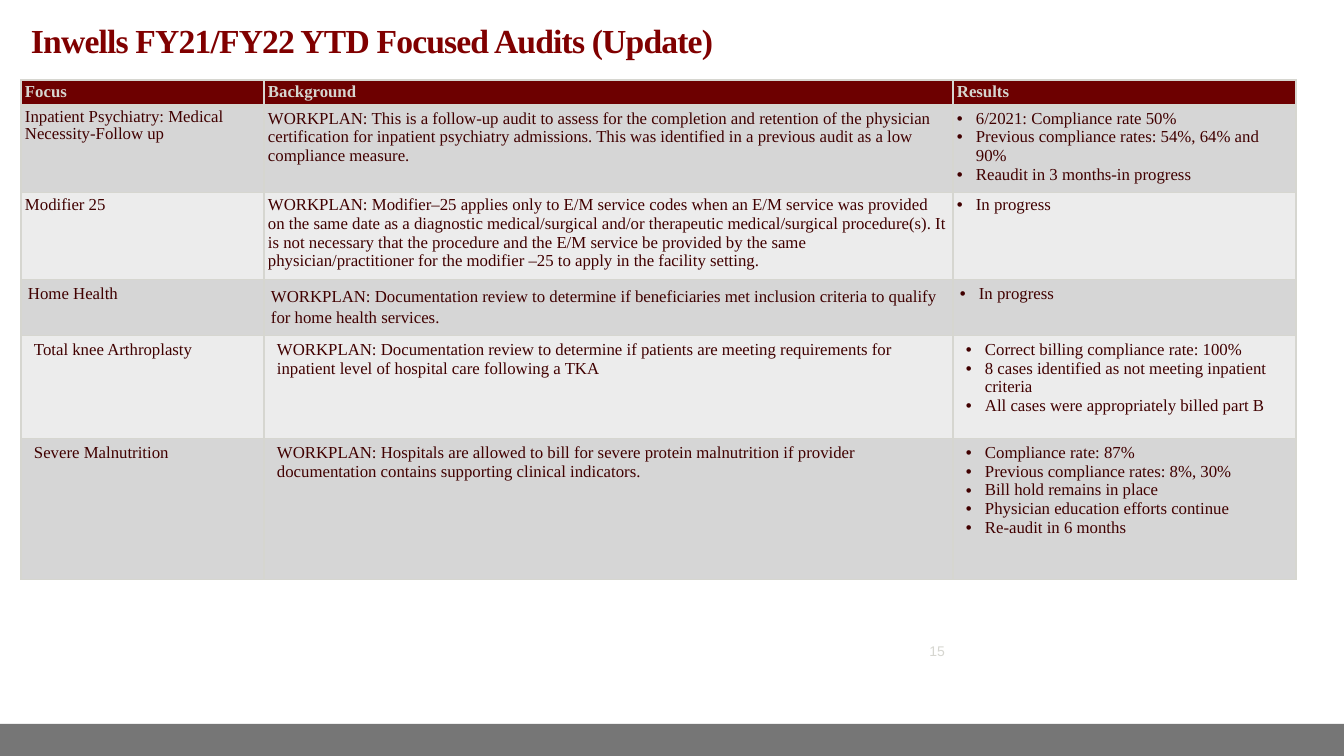
import pptx
import pptx.util
import pptx.dml.color
import pptx.enum.shapes
import pptx.enum.text
import lxml.etree

RGB = pptx.dml.color.RGBColor
MAROON = RGB(0x80, 0x00, 0x00)
HEADER = RGB(0x6D, 0x00, 0x00)
INK = RGB(0x40, 0x00, 0x00)
PALE = RGB(0xD6, 0xD6, 0xD0)
BANDS = [RGB(0xEC, 0xEC, 0xEC), RGB(0xD6, 0xD6, 0xD6)]
GREY = RGB(0x76, 0x76, 0x76)
SERIF = "Times New Roman"
EMU_PER_INCH, PX_PER_INCH = 914400, 100.8
ANCHOR = pptx.enum.text.MSO_ANCHOR


def px(n):
    return pptx.util.Emu(round(n * EMU_PER_INCH / PX_PER_INCH))


def style(font, size, color, name=SERIF, bold=False):
    values = {"size": pptx.util.Pt(size), "name": name, "bold": bold}
    for key, value in values.items():
        setattr(font, key, value)
    font.color.rgb = color


prs = pptx.Presentation()
prs.slide_width, prs.slide_height = px(1344), px(756)
s = prs.slides.add_slide(prs.slide_layouts[5])

bar = s.shapes.add_shape(pptx.enum.shapes.MSO_SHAPE.RECTANGLE, 0, px(724), px(1344), px(32))
bar.shadow.inherit = False
bar.fill.solid()
bar.fill.fore_color.rgb = GREY
bar.line.fill.background()

title = s.shapes.title
place = {"left": 21, "top": 14, "width": 1313, "height": 47}
for key, value in place.items():
    setattr(title, key, px(value))
tf = title.text_frame
frame = {"auto_size": pptx.enum.text.MSO_AUTO_SIZE.NONE, "word_wrap": True,
         "vertical_anchor": ANCHOR.TOP, "margin_left": px(10), "margin_right": px(10),
         "margin_top": px(10), "margin_bottom": px(10)}
for key, value in frame.items():
    setattr(tf, key, value)
p = tf.paragraphs[0]
p.alignment = pptx.enum.text.PP_ALIGN.LEFT
p.line_spacing = 0.9
r = p.add_run()
r.text = "Inwells FY21/FY22 YTD Focused Audits (Update)"
style(r.font, 24, MAROON, bold=True)
r.font._element.set("spc", "-60")

number = s.shapes.add_textbox(px(899), px(639), px(56), px(25))
tf = number.text_frame
frame = {"word_wrap": True, "vertical_anchor": ANCHOR.BOTTOM, "margin_left": 0,
         "margin_right": px(10), "margin_top": px(5), "margin_bottom": px(5)}
for key, value in frame.items():
    setattr(tf, key, value)
p = tf.paragraphs[0]
p.alignment = pptx.enum.text.PP_ALIGN.RIGHT
r = p.add_run()
r.text = "15"
style(r.font, 10, PALE, name="Arial")

audits = [
    ("Focus", "Background", ["Results"]),
    ("Inpatient Psychiatry: Medical Necessity-Follow up",
     "WORKPLAN: This is a follow-up audit to assess for the completion and retention of the "
     "physician certification for inpatient psychiatry admissions. This was identified in a "
     "previous audit as a low compliance measure.",
     ["6/2021: Compliance rate 50%", "Previous compliance rates: 54%, 64% and 90%",
      "Reaudit in 3 months-in progress"]),
    ("Modifier 25",
     "WORKPLAN: Modifier–25 applies only to E/M service codes when an E/M service was provided "
     "on the same date as a diagnostic medical/surgical and/or therapeutic medical/surgical "
     "procedure(s). It is not necessary that the procedure and the E/M service be provided by "
     "the same physician/practitioner for the modifier –25 to apply in the facility setting.",
     ["In progress"]),
    ("Home Health",
     "WORKPLAN: Documentation review to determine if beneficiaries met inclusion criteria to "
     "qualify for home health services.",
     ["In progress"]),
    ("Total knee Arthroplasty",
     "WORKPLAN: Documentation review to determine if patients are meeting requirements for "
     "inpatient level of hospital care following a TKA",
     ["Correct billing compliance rate: 100%",
      "8 cases identified as not meeting inpatient criteria",
      "All cases were appropriately billed part B"]),
    ("Severe Malnutrition",
     "WORKPLAN: Hospitals are allowed to bill for severe protein malnutrition if provider "
     "documentation contains supporting clinical indicators.",
     ["Compliance rate: 87%", "Previous compliance rates: 8%, 30%", "Bill hold remains in place",
      "Physician education efforts continue", "Re-audit in 6 months"]),
]
widths = [243, 689, 343]
heights = [23, 85, 81, 55, 103, 141]
margins = [(4, 3), (4, 3), (4, 3), (7, 5), (13, 5), (13, 5)]
spacing = {(1, 0): 0.9, (3, 1): 1.15}

table = s.shapes.add_table(len(heights), len(widths), px(21), px(80),
                           px(sum(widths)), px(sum(heights))).table
table.horz_banding = False
for column, width in zip(table.columns, widths):
    column.width = px(width)

for i, audit in enumerate(audits):
    table.rows[i].height = px(heights[i])
    side, edge = (px(m) for m in margins[i])
    for j, content in enumerate(audit):
        cell = table.cell(i, j)
        frame = {"margin_left": side, "margin_right": side, "margin_top": edge,
                 "margin_bottom": edge, "vertical_anchor": ANCHOR.TOP}
        for key, value in frame.items():
            setattr(cell, key, value)
        tcPr = cell._tc.get_or_add_tcPr()
        for tag in ("lnL", "lnR", "lnT", "lnB"):
            points = 3 if i == 0 and tag == "lnB" else 1
            ln = lxml.etree.SubElement(tcPr, pptx.oxml.ns.qn("a:" + tag),
                                       w=str(pptx.util.Pt(points)))
            fill = lxml.etree.SubElement(ln, pptx.oxml.ns.qn("a:solidFill"))
            lxml.etree.SubElement(fill, pptx.oxml.ns.qn("a:srgbClr"), val=str(PALE))
        cell.fill.solid()
        cell.fill.fore_color.rgb = BANDS[i % 2] if i else HEADER
        lines = content if j == 2 else [content]
        tf = cell.text_frame
        for n, line in enumerate(lines):
            p = tf.add_paragraph() if n else tf.paragraphs[0]
            if (i, j) in spacing:
                p.line_spacing = spacing[i, j]
            if i and j == 2:
                pPr = p._p.get_or_add_pPr()
                pPr.set("marL", str(px(19)))
                pPr.set("indent", str(-px(19)))
                lxml.etree.SubElement(pPr, pptx.oxml.ns.qn("a:buFont"), typeface="Arial")
                lxml.etree.SubElement(pPr, pptx.oxml.ns.qn("a:buChar"), char="•")
            r = p.add_run()
            r.text = line
            style(r.font, 12, INK if i else PALE, bold=i == 0)

prs.save("out.pptx")
